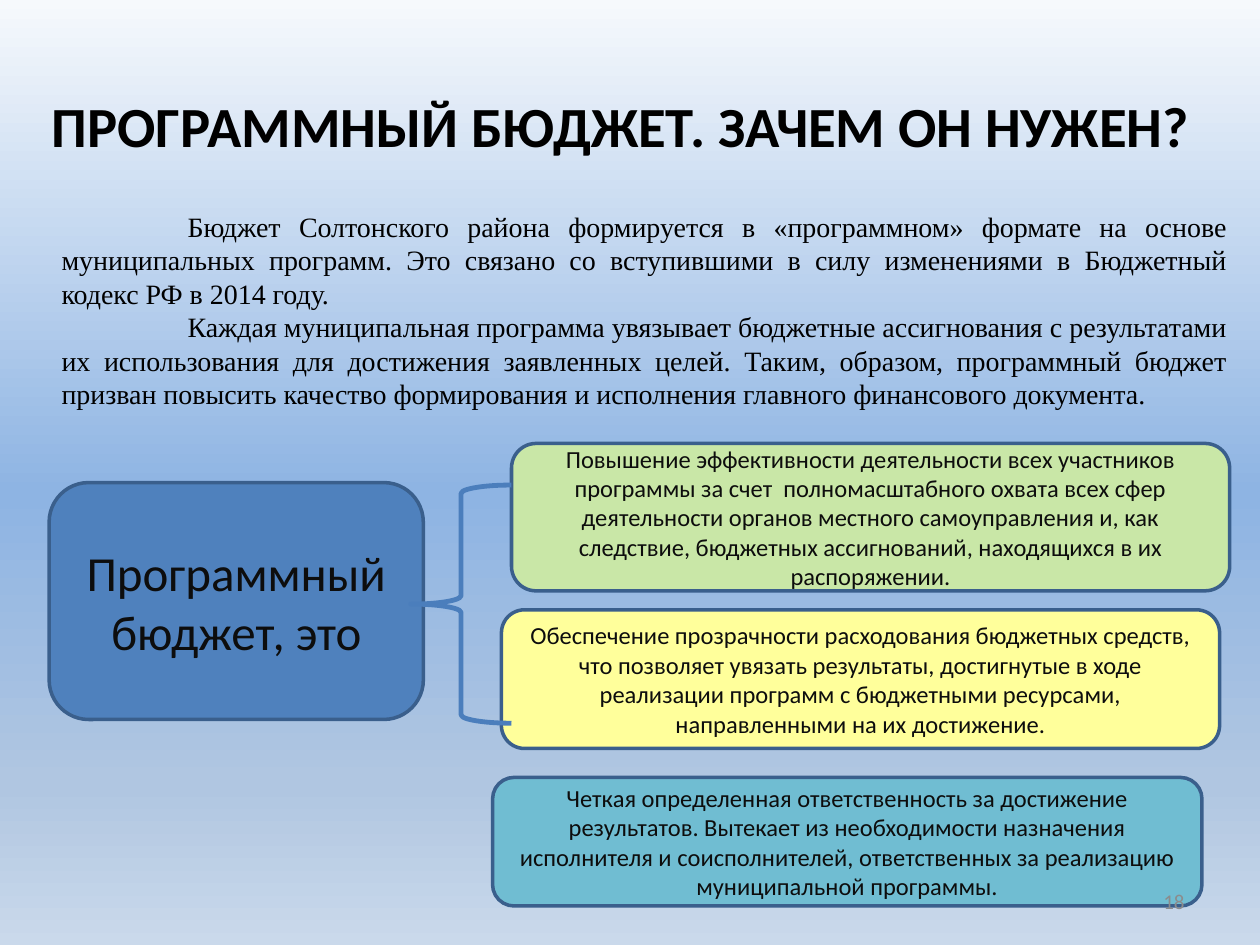
from lxml.etree import SubElement
from pptx import Presentation
from pptx.dml.color import RGBColor
from pptx.enum.shapes import MSO_SHAPE
from pptx.enum.text import MSO_ANCHOR, PP_ALIGN
from pptx.oxml.ns import qn
from pptx.util import Inches, Pt

WIDE, HIGH = Inches(10), Inches(7.5)
SKY = [(0, "F6F9FC"), (52, "8EB4E3"), (83, "B0C6E1"), (100, "CAD9EB")]
HEAD = "ПРОГРАММНЫЙ БЮДЖЕТ. ЗАЧЕМ ОН НУЖЕН?"
INTRO = [
    "Бюджет Солтонского района формируется в «программном» формате на основе "
    "муниципальных программ. Это связано со вступившими в силу изменениями в "
    "Бюджетный кодекс РФ в 2014 году.",
    "Каждая муниципальная программа увязывает бюджетные ассигнования с "
    "результатами их использования для достижения заявленных целей. Таким, "
    "образом, программный бюджет призван повысить качество формирования и "
    "исполнения главного финансового документа.",
]
CARDS = [
    ((3.9, 51.07, 29.7, 25.07), "4F81BD", 28, "Программный бюджет, это"),
    ((39.8, 64.53, 57, 14.67), "FFFF9B", 14,
     "Обеспечение прозрачности расходования бюджетных средств, что позволяет "
     "увязать результаты, достигнутые в ходе реализации программ с бюджетными "
     "ресурсами, направленными на их достижение."),
    ((40.6, 46.93, 57, 15.6), "C9E7A7", 14,
     "Повышение эффективности деятельности всех участников программы за счет  "
     "полномасштабного охвата всех сфер деятельности органов местного "
     "самоуправления и, как следствие, бюджетных ассигнований, находящихся в "
     "их распоряжении."),
    ((39.1, 82.27, 56.3, 13.6), "70BDD2", 14,
     "Четкая определенная ответственность за достижение результатов. Вытекает "
     "из необходимости назначения исполнителя и соисполнителей, ответственных "
     "за реализацию муниципальной программы."),
]


def tint(code):
    """Turn a hex string into a colour."""
    return RGBColor.from_string(code)


def area(left, top, width, height):
    """Turn percentages of the slide into lengths."""
    return [int(part * full / 100) for part, full in
            zip((left, top, width, height), (WIDE, HIGH, WIDE, HIGH))]


def write(shape, *lines, size=14, font="Calibri", color="0D0D0D", bold=False,
          align=PP_ALIGN.CENTER, anchor=MSO_ANCHOR.MIDDLE, indent=0, pitch=None):
    """Fill a shape with formatted paragraphs."""
    frame = shape.text_frame
    frame.word_wrap, frame.vertical_anchor = True, anchor
    for place, line in enumerate(lines):
        para = frame.add_paragraph() if place else frame.paragraphs[0]
        para.alignment = align
        if pitch:
            para.line_spacing = Pt(pitch)
        if indent:
            para._p.get_or_add_pPr().set("indent", str(Inches(indent)))
        run = para.add_run()
        run.text = line
        run.font.size, run.font.name, run.font.bold = Pt(size), font, bold
        run.font.color.rgb = tint(color)


def paint(slide, stops):
    """Give the slide a vertical gradient."""
    fill = slide.background.fill
    fill.gradient()
    fill.gradient_angle = 270
    ramp = slide.element.find(".//" + qn("a:gsLst"))
    for old in list(ramp):
        ramp.remove(old)
    for share, code in stops:
        stop = SubElement(ramp, qn("a:gs"), pos=str(share * 1000))
        SubElement(stop, qn("a:srgbClr"), val=code)


def draw(slide, kind, spot, line, weight, fill=None):
    """Add an outlined preset shape."""
    shape = slide.shapes.add_shape(kind, *area(*spot))
    shape.shadow.inherit = False
    shape.line.color.rgb, shape.line.width = tint(line), Pt(weight)
    if fill:
        shape.fill.solid()
        shape.fill.fore_color.rgb = tint(fill)
    else:
        shape.fill.background()
    return shape


def label(slide, spot, *lines, **style):
    """Add a text box."""
    write(slide.shapes.add_textbox(*area(*spot)), *lines, **style)


def main():
    """Build and save the slide."""
    deck = Presentation()
    deck.slide_width, deck.slide_height = WIDE, HIGH
    slide = deck.slides.add_slide(deck.slide_layouts[5])
    paint(slide, SKY)
    title = slide.shapes.title
    title.left, title.top, title.width, title.height = area(3.1, 7.07, 95, 12.27)
    write(title, HEAD, size=32.4, color="000000", bold=True, align=PP_ALIGN.LEFT)
    label(slide, (3.9, 21.47, 94.5, 26.53), *INTRO, size=16,
          font="Times New Roman", color="000000", align=PP_ALIGN.JUSTIFY,
          anchor=MSO_ANCHOR.TOP, indent=1, pitch=19.2)
    for spot, fill, size, text in CARDS:
        card = draw(slide, MSO_SHAPE.ROUNDED_RECTANGLE, spot, "3A5F8C", 2, fill)
        write(card, text, size=size)
    draw(slide, MSO_SHAPE.LEFT_BRACE, (32.6, 51.33, 8, 25.2), "4B7EBC", 2.75)
    label(slide, (71.7, 92.67, 23.3, 5.33), "18", size=12, color="8C8C8C",
          align=PP_ALIGN.RIGHT)
    deck.save("out.pptx")


if __name__ == "__main__":
    main()
